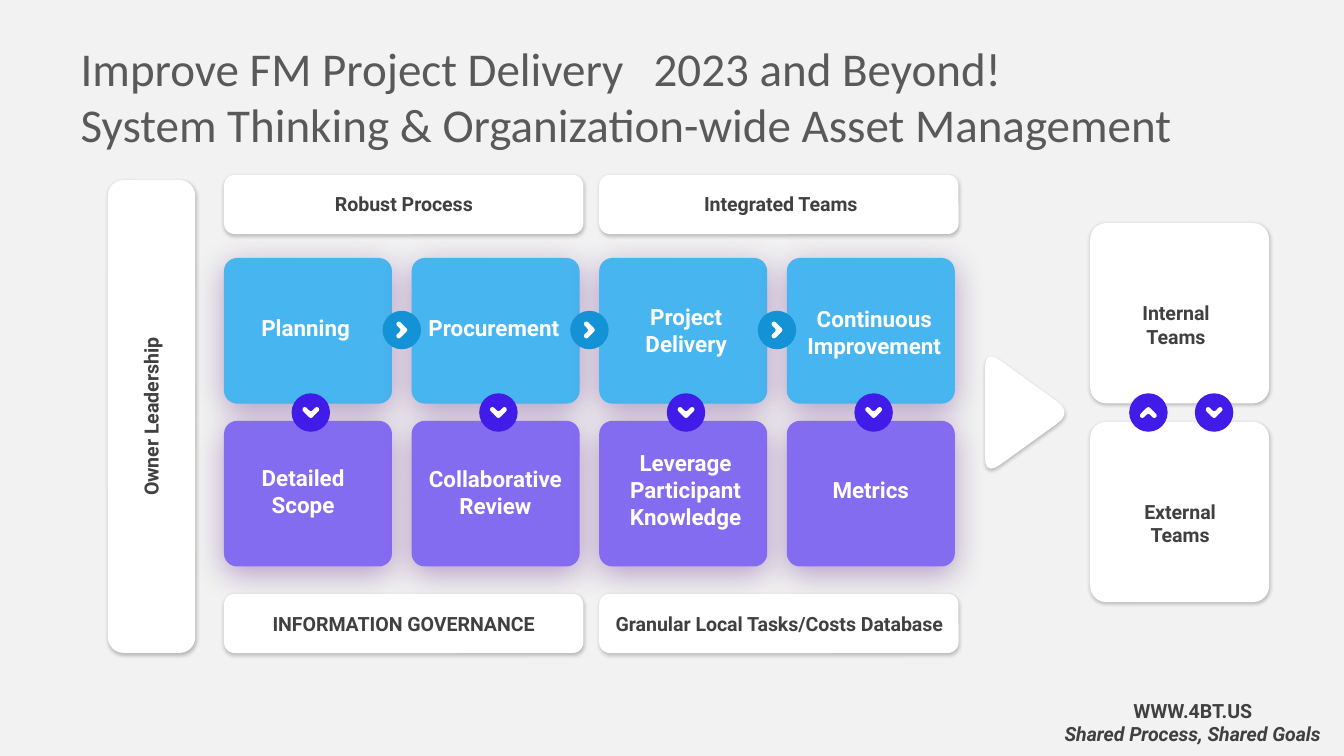
import lxml.etree
import pptx
import pptx.dml.color
import pptx.enum.shapes
import pptx.enum.text
import pptx.oxml.ns
import pptx.util

Pt = pptx.util.Pt
RGBColor = pptx.dml.color.RGBColor
SHAPES = pptx.enum.shapes.MSO_SHAPE
TEXT = pptx.enum.text
qn = pptx.oxml.ns.qn

BACKDROP = RGBColor(0xF1, 0xF2, 0xF1)
WHITE = RGBColor(0xFF, 0xFF, 0xFF)
SKY = RGBColor(0x47, 0xB5, 0xEF)
VIOLET = RGBColor(0x84, 0x6C, 0xF1)
BLUE = RGBColor(0x13, 0x92, 0xD6)
INDIGO = RGBColor(0x41, 0x1C, 0xE9)
HEADING = RGBColor(0x59, 0x59, 0x59)
INK = RGBColor(0x40, 0x40, 0x40)
BLACK = RGBColor(0, 0, 0)
PLUM = RGBColor(0x55, 0x0D, 0x7F)

SOFT = {"color": BLACK, "alpha": 23, "blur": 2, "dist": 1, "angle": 70}
GLOW = {"color": PLUM, "alpha": 37, "blur": 17, "dist": 4, "angle": 90}

CHEVRON = [(-3.3, -3.2), (-1.5, -5), (3.5, 0), (-1.5, 5), (-3.3, 3.2), (-0.1, 0)]
ARROW = [(-33.8, -21.2), (33.8, -21.2), (0, 25.6)]


class ProcessSlide:
    FONTS = {
        "title": ({"name": "Calibri", "size": Pt(25.2), "bold": False}, HEADING),
        "step": ({"name": "Roboto", "size": Pt(12), "bold": True}, WHITE),
        "label": ({"name": "Roboto", "size": Pt(10.5), "bold": True}, INK),
        "motto": ({"name": "Roboto", "size": Pt(10.5), "bold": True, "italic": True}, INK),
    }
    FRAMES = {
        "title": {"word_wrap": True, "auto_size": TEXT.MSO_AUTO_SIZE.NONE,
                  "vertical_anchor": TEXT.MSO_ANCHOR.MIDDLE},
        "label": {"word_wrap": True, "auto_size": TEXT.MSO_AUTO_SIZE.SHAPE_TO_FIT_TEXT,
                  "margin_left": 0, "margin_right": 0, "margin_top": 0, "margin_bottom": 0},
    }

    def __init__(self, slide):
        self.slide = slide
        slide.background.fill.solid()
        slide.background.fill.fore_color.rgb = BACKDROP

    def apply(self, target, values):
        for name, value in values.items():
            setattr(target, name, value)

    def style_text(self, paragraph, style, align):
        values, color = self.FONTS[style]
        paragraph.alignment = align
        for run in paragraph.runs:
            self.apply(run.font, values)
            run.font.color.rgb = color

    def title(self, lines, box, tab):
        heading = self.slide.shapes.title
        self.apply(heading, dict(zip(("left", "top", "width", "height"), map(Pt, box))))
        frame = heading.text_frame
        frame.text = "\n".join(lines)
        self.apply(frame, self.FRAMES["title"])
        for paragraph in frame.paragraphs:
            stops = lxml.etree.SubElement(paragraph._p.get_or_add_pPr(), qn("a:tabLst"))
            lxml.etree.SubElement(stops, qn("a:tab"), pos=str(Pt(tab)), algn="l")
            self.style_text(paragraph, "title", TEXT.PP_ALIGN.LEFT)

    def label(self, text, box, style="label", rotation=0):
        caption = self.slide.shapes.add_textbox(*map(Pt, box))
        caption.rotation = rotation
        caption.text_frame.text = text
        self.apply(caption.text_frame, self.FRAMES["label"])
        self.style_text(caption.text_frame.paragraphs[0], style, TEXT.PP_ALIGN.CENTER)

    def paint(self, shape, color, shadow=None):
        shape.fill.solid()
        shape.fill.fore_color.rgb = color
        shape.line.fill.background()
        shape.shadow.inherit = False
        if shadow:
            effects = shape._element.spPr.find(qn("a:effectLst"))
            outer = lxml.etree.SubElement(
                effects, qn("a:outerShdw"), blurRad=str(Pt(shadow["blur"])),
                dist=str(Pt(shadow["dist"])), dir=str(shadow["angle"] * 60000),
                algn="ctr", rotWithShape="0")
            tint = lxml.etree.SubElement(outer, qn("a:srgbClr"), val=str(shadow["color"]))
            lxml.etree.SubElement(tint, qn("a:alpha"), val=str(shadow["alpha"] * 1000))

    def card(self, box, color, shadow, corner, rotation=0):
        panel = self.slide.shapes.add_shape(SHAPES.ROUNDED_RECTANGLE, *map(Pt, box))
        panel.adjustments[0] = corner
        panel.rotation = rotation
        self.paint(panel, color, shadow)

    def outline(self, center, corners, inset, rotation, shadow=None):
        points = []
        for i, (x, y) in enumerate(corners):
            ends = []
            for px, py in (corners[i - 1], corners[(i + 1) % len(corners)]):
                reach = inset / ((px - x) ** 2 + (py - y) ** 2) ** 0.5
                ends.append((x + (px - x) * reach, y + (py - y) * reach))
            (ax, ay), (bx, by) = ends
            for t in (0, 0.2, 0.4, 0.6, 0.8, 1):
                a, m, b = (1 - t) ** 2, 2 * t * (1 - t), t ** 2
                points.append((Pt(center[0] + a * ax + m * x + b * bx),
                               Pt(center[1] + a * ay + m * y + b * by)))
        builder = self.slide.shapes.build_freeform(*points[0])
        builder.add_line_segments(points[1:], close=True)
        pointer = builder.convert_to_shape()
        pointer.left = Pt(center[0]) - pointer.width // 2
        pointer.top = Pt(center[1]) - pointer.height // 2
        pointer.rotation = rotation
        self.paint(pointer, WHITE, shadow)

    def badge(self, x, y, color, rotation, size=20.6):
        disc = self.slide.shapes.add_shape(
            SHAPES.OVAL, Pt(x - size / 2), Pt(y - size / 2), Pt(size), Pt(size))
        self.paint(disc, color)
        self.outline((x, y), CHEVRON, 1.5, rotation)


def main():
    deck = pptx.Presentation()
    deck.slide_width, deck.slide_height = Pt(720), Pt(405)
    page = ProcessSlide(deck.slides.add_slide(deck.slide_layouts[5]))

    page.title(["Improve FM Project Delivery\t2023 and Beyond!",
                "System Thinking & Organization-wide Asset Management"],
               (36, 16, 648, 70.5), 307)

    columns = [120 + 100.5 * i for i in range(4)]
    for top in (226, 119.5):
        page.card((584, top, 95.9, 96.6), WHITE, SOFT, 0.09)
    for top, color in ((138.25, SKY), (225.5, VIOLET)):
        for left in columns:
            page.card((left, top, 90, 78), color, GLOW, 0.09)
    for top in (93.7, 318.2):
        for left in columns[::2]:
            page.card((left, top, 192.5, 31.7), WHITE, SOFT, 0.18)
    page.card((-45.5, 199.7, 253.4, 46.8), WHITE, SOFT, 0.18, 270)
    page.outline((549, 221), ARROW, 10, 270, SOFT)

    for left in columns[:3]:
        page.badge(left + 95.25, 176.8, BLUE, 0)
    for left in columns:
        page.badge(left + 46.5, 221, INDIGO, 90)
    page.badge(615.2, 221, INDIGO, 270)
    page.badge(650.4, 221, INDIGO, 90)

    for text, box in (
        ("Planning", (127.4, 168.5, 72.7, 14.4)),
        ("Procurement", (224.6, 168.5, 80, 14.4)),
        ("Project Delivery", (337, 162.3, 61.2, 28.8)),
        ("Continuous Improvement", (428.4, 163.4, 80, 28.8)),
        ("Detailed Scope", (137.5, 248.6, 49.7, 28.8)),
        ("Collaborative Review", (225.4, 249.1, 80, 28.8)),
        ("Leverage Participant Knowledge", (332, 240.5, 70.6, 43.9)),
        ("Metrics", (443.5, 255, 46, 14.4)),
    ):
        page.label(text, box, "step")
    for text, box in (
        ("Robust Process", (149.8, 103, 133.2, 13)),
        ("Integrated Teams", (328.3, 103, 180, 13)),
        ("INFORMATION GOVERNANCE", (127.4, 327.6, 177.8, 13)),
        ("Granular Local Tasks/Costs Database", (327.6, 327.6, 180, 13)),
        ("Internal Teams", (598.3, 161.3, 63.4, 25.2)),
        ("External Teams", (600.5, 267.8, 63.4, 25.2)),
        ("WWW.4BT.US", (590.4, 374.4, 97.2, 13)),
    ):
        page.label(text, box)
    page.label("Owner Leadership", (31, 216.7, 100, 13), rotation=270)
    page.label("Shared Process, Shared Goals", (558, 386.8, 162, 13), "motto")

    deck.save("out.pptx")


if __name__ == "__main__":
    main()
